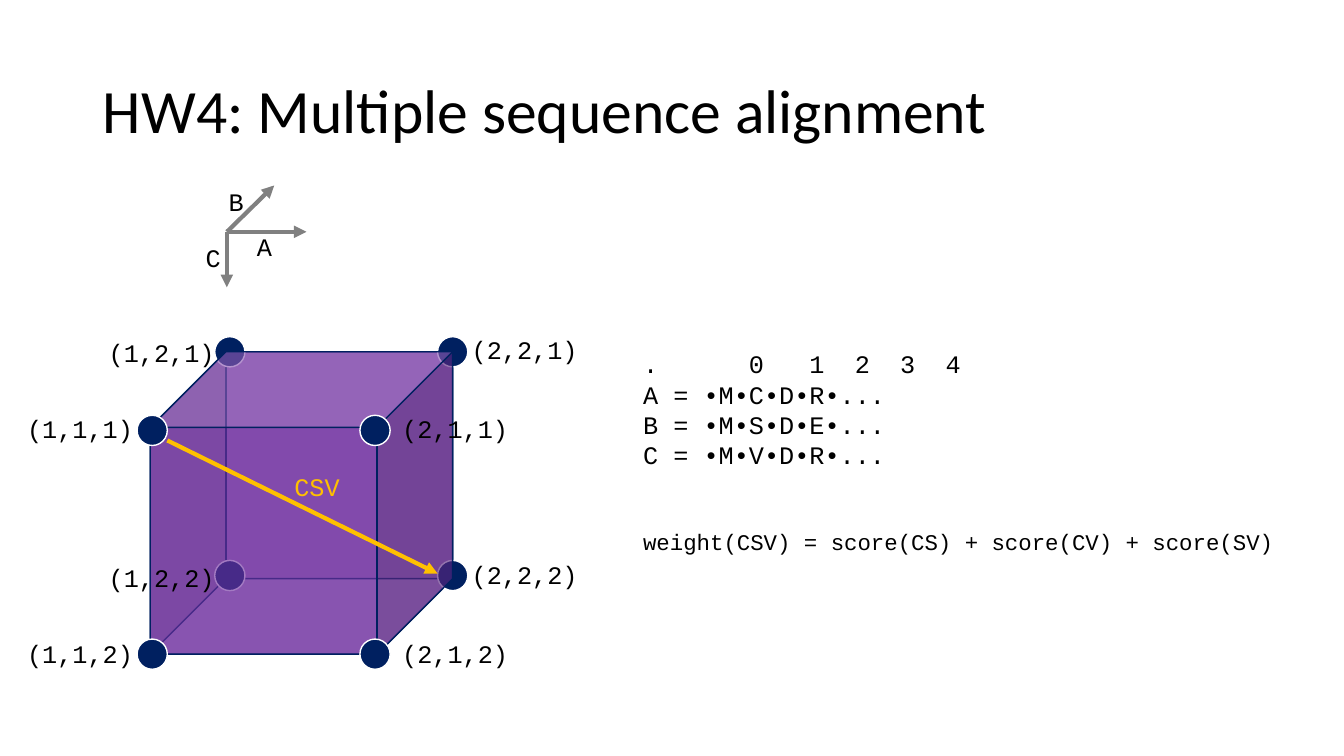
from lxml.etree import SubElement
from pptx import Presentation
from pptx.dml.color import RGBColor
from pptx.enum.shapes import MSO_CONNECTOR, MSO_SHAPE
from pptx.enum.text import MSO_ANCHOR, MSO_AUTO_SIZE, PP_ALIGN
from pptx.oxml.ns import qn
from pptx.util import Inches, Pt

COLORS = {"navy": "002060", "purple": "7030A0", "white": "FFFFFF",
          "gray": "808080", "gold": "FFC000", "black": "000000"}
TITLE = "HW4: Multiple sequence alignment"
CODE_FONT = "Courier New"

CUBE = (1.49, 3.49, 3, 3)
DOT = 0.3
STEP = (2.21, 2.22)
BACK_DOTS = (2.13, 3.34)
FRONT_DOTS = (1.36, 4.12)

AXIS_ORIGIN = (2.25, 2.3)
AXES = [("A", (3.04, 2.3), (2.45, 2.25)),
        ("B", (2.72, 1.84), (2.17, 1.8)),
        ("C", (2.25, 2.85), (1.94, 2.35))]

COLUMNS = [("(1,1,{})", 0.17, 4.05), ("(2,1,{})", 3.89, 4.05),
           ("(2,2,{})", 4.58, 3.27), ("(1,2,{})", 0.98, 3.3)]
LEVEL_GAP = 2.23

SEQUENCES = [".\t0\t1\t2\t3\t4",
             "A = •M•C•D•R•...",
             "B = •M•S•D•E•...",
             "C = •M•V•D•R•..."]
INDEX_CHARACTERS = [7, 11, 14, 17, 20]
CHARACTER_WIDTH = 0.15
WEIGHT = "weight(CSV) = score(CS) + score(CV) + score(SV)"


def color(name):
    return RGBColor.from_string(COLORS[name])


def format_text(span, name=CODE_FONT, size=18, ink="black"):
    for key, value in {"name": name, "size": Pt(size)}.items():
        setattr(span.font, key, value)
    span.font.color.rgb = color(ink)


def paint(shape, fill, line):
    shape.shadow.inherit = False
    shape.fill.solid()
    shape.fill.fore_color.rgb = color(fill)
    shape.line.color.rgb = color(line)
    shape.line.width = Pt(1)


def add_cube(page, rotation):
    cube = page.shapes.add_shape(MSO_SHAPE.CUBE, *map(Inches, CUBE))
    cube.rotation = rotation
    paint(cube, "purple", "navy")
    tint = cube.fill._xPr.find(qn("a:solidFill"))[0]
    SubElement(tint, qn("a:alpha"), val="64000")


def add_dots(page, corner):
    group = page.shapes.add_group_shape()
    for column in range(2):
        for row in range(2):
            place = (corner[0] + column * STEP[0], corner[1] + row * STEP[1], DOT, DOT)
            dot = group.shapes.add_shape(MSO_SHAPE.OVAL, *map(Inches, place))
            paint(dot, "navy", "white")


def add_arrow(page, start, end, ink):
    arrow = page.shapes.add_connector(MSO_CONNECTOR.STRAIGHT, *map(Inches, start + end))
    arrow.line.color.rgb = color(ink)
    arrow.line.width = Pt(3)
    SubElement(arrow.line._get_or_add_ln(), qn("a:tailEnd"), type="triangle")
    SubElement(arrow._element.spPr, qn("a:effectLst"))


def add_text(page, lines, left, top, width, height=0.4, ink="black"):
    box = page.shapes.add_textbox(*map(Inches, (left, top, width, height)))
    frame = box.text_frame
    frame.word_wrap = True
    frame.auto_size = MSO_AUTO_SIZE.SHAPE_TO_FIT_TEXT
    for index, line in enumerate(lines):
        para = frame.add_paragraph() if index else frame.paragraphs[0]
        span = para.add_run()
        span.text = line
        format_text(span, ink=ink)
    return frame.paragraphs


def add_title(page):
    title = page.shapes.title
    place = dict(zip(("left", "top", "width", "height"), (0.92, 0.4, 11.5, 1.45)))
    for key, value in place.items():
        setattr(title, key, Inches(value))
    title.text_frame.text = TITLE
    title.text_frame.vertical_anchor = MSO_ANCHOR.MIDDLE
    para = title.text_frame.paragraphs[0]
    para.alignment = PP_ALIGN.LEFT
    para.line_spacing = 0.9
    format_text(para.runs[0], "Calibri", 44)


def add_alignment(page):
    paras = add_text(page, SEQUENCES + [WEIGHT], 6.28, 3.41, 7.05, 3)
    stops = SubElement(paras[0]._p.get_or_add_pPr(), qn("a:tabLst"))
    for character in INDEX_CHARACTERS:
        position = Inches(character * CHARACTER_WIDTH)
        SubElement(stops, qn("a:tab"), pos=str(position), algn="l")
    paras[-1].space_before = Pt(42)
    format_text(paras[-1].runs[0], size=16)


def main():
    deck = Presentation()
    deck.slide_width, deck.slide_height = Inches(13.33), Inches(7.5)
    page = deck.slides.add_slide(deck.slide_layouts[5])
    add_title(page)
    for rotation, corner in ((180, BACK_DOTS), (0, FRONT_DOTS)):
        add_cube(page, rotation)
        add_dots(page, corner)
    for name, tip, place in AXES:
        add_arrow(page, AXIS_ORIGIN, tip, "gray")
        add_text(page, [name], *place, 0.41)
    add_alignment(page)
    for pattern, left, top in COLUMNS:
        for level in range(2):
            add_text(page, [pattern.format(level + 1)], left, top + level * LEVEL_GAP, 1.32)
    add_arrow(page, (1.66, 4.37), (4.34, 5.69), "gold")
    add_text(page, ["CSV"], 2.82, 4.63, 0.88, ink="gold")
    deck.save("out.pptx")


if __name__ == "__main__":
    main()
